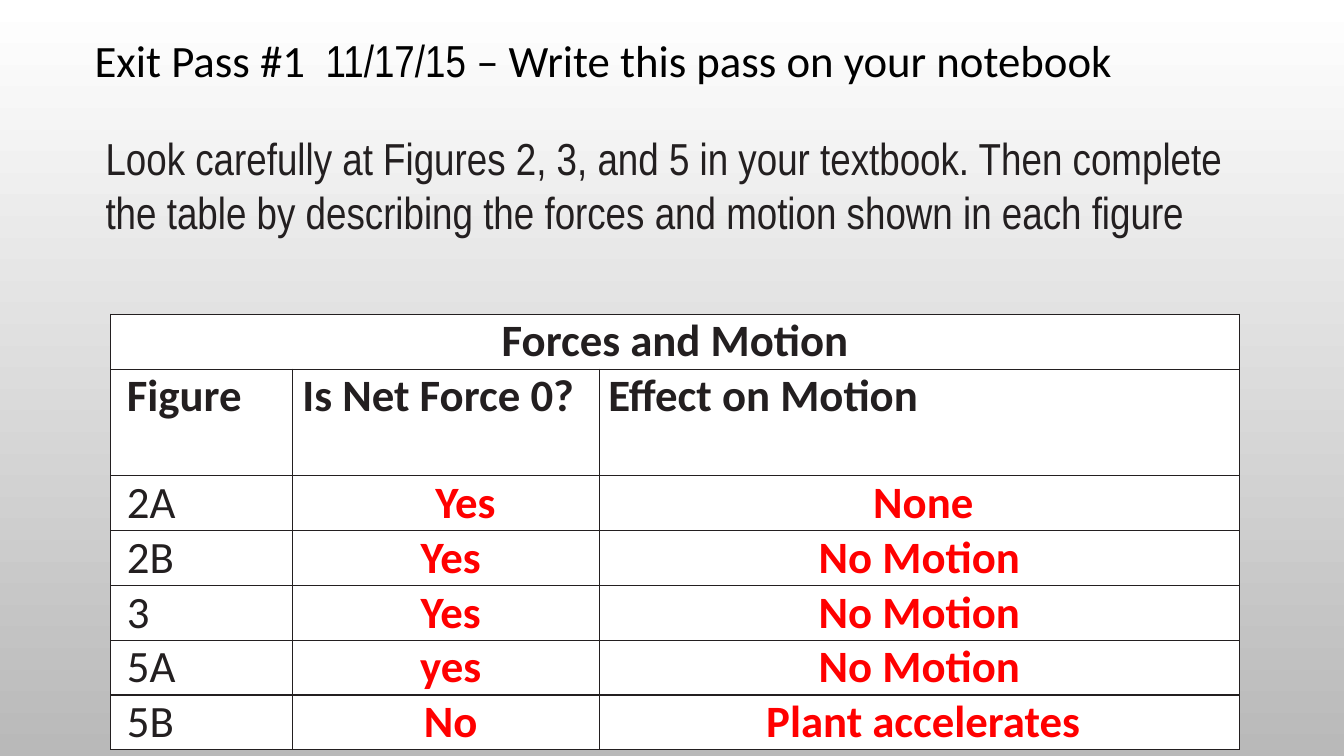
"""Build the exit pass slide with its forces and motion table."""
from dataclasses import dataclass

from lxml import etree
from pptx import Presentation
from pptx import util as u
from pptx.dml.color import RGBColor
from pptx.enum import text
from pptx.oxml import ns

CM = u.Cm


@dataclass(frozen=True)
class Theme:
    """Colours, fonts and type size of the slide."""
    ink: str = "231F20"
    title: str = "000000"
    answer: str = "FF0000"
    cell: str = "FFFFFF"
    sky: tuple = ("FFFFFF", "B9B9B9")
    body: str = "Calibri"
    narrow: str = "Arial Narrow"
    size: int = 32
    border: int = 1


THEME = Theme()
TITLE = [
    ("Exit Pass #1  ", THEME.body),
    ("11/17/15", THEME.narrow),
    (" – Write this pass on your notebook", THEME.body),
]
TASK = ("Look carefully at Figures 2, 3, and 5 in your textbook. Then complete "
        "the table by describing the forces and motion shown in each figure")
CAPTION = "Forces and Motion"
HEADERS = ["Figure", "Is Net Force 0?", "Effect on Motion"]
ANSWERS = [
    ("2A", "Yes", "None"),
    ("2B", "Yes", "No Motion"),
    ("3", "Yes", "No Motion"),
    ("5A", "yes", "No Motion"),
    ("5B", "No", "Plant accelerates"),
]
TITLE_AREA = (2.13, 0.69, 27.05, 1.63)
TASK_AREA = (2.41, 3.18, 29.08, 3)
TABLE_CORNER = (2.79, 7.92)
COLUMNS = [4.58, 7.73, 16.14]
ROW, HEADER_ROW = 1.35, 2.69
HEADER_INDENTS = [0.41, 0.25, 0.23]
ANSWER_INDENTS = {"2A": (0.41, 0.99, 0.2), "5B": (0.41, 0.25, 0.2)}
USUAL_INDENTS = (0.41, 0.25, 0)


def style(font, color, name=THEME.body, bold=False):
    """Apply the shared type size with a face, colour and weight."""
    font.name, font.size, font.bold = name, u.Pt(THEME.size), bold
    font.color.rgb = RGBColor.from_string(color)


def paint_background(page):
    """Fill the page from white at the top to grey at the bottom."""
    fill = page.background.fill
    fill.gradient()
    fill.gradient_angle = 270
    for stop, color in zip(fill.gradient_stops, THEME.sky):
        stop.color.rgb = RGBColor.from_string(color)


def add_borders(cell):
    """Draw a thin line on every side of a cell."""
    properties = cell._tc.get_or_add_tcPr()
    for side in ("lnL", "lnR", "lnT", "lnB"):
        line = etree.SubElement(properties, ns.qn(f"a:{side}"), w=str(u.Pt(THEME.border)))
        solid = etree.SubElement(line, ns.qn("a:solidFill"))
        etree.SubElement(solid, ns.qn("a:srgbClr"), val=THEME.ink)


def write_cell(cell, words, indent=0, centred=False, color=THEME.ink, bold=True):
    """Write and style the words of one cell."""
    cell.margin_left = CM(indent)
    cell.margin_right = cell.margin_top = cell.margin_bottom = 0
    cell.text = words
    para = cell.text_frame.paragraphs[0]
    para.alignment = text.PP_ALIGN.CENTER if centred else text.PP_ALIGN.LEFT
    style(para.font, color, bold=bold)


def add_title(page):
    """Place the title and set its two faces."""
    title = page.shapes.title
    title.left, title.top, title.width, title.height = map(CM, TITLE_AREA)
    frame = title.text_frame
    frame.word_wrap = True
    frame.auto_size = text.MSO_AUTO_SIZE.NONE
    frame.vertical_anchor = text.MSO_ANCHOR.TOP
    para = frame.paragraphs[0]
    para.alignment = text.PP_ALIGN.LEFT
    for words, face in TITLE:
        span = para.add_run()
        span.text = words
        style(span.font, THEME.title, face)


def add_task(page):
    """Place the instruction under the title."""
    frame = page.shapes.add_textbox(*map(CM, TASK_AREA)).text_frame
    frame.word_wrap = True
    frame.text = TASK
    style(frame.paragraphs[0].font, THEME.ink, THEME.narrow)


def add_answers(page):
    """Place the table with its caption, headers and answers."""
    heights = [ROW, HEADER_ROW] + [ROW] * len(ANSWERS)
    area = (*TABLE_CORNER, sum(COLUMNS), sum(heights))
    table = page.shapes.add_table(len(heights), len(COLUMNS), *map(CM, area)).table
    table.first_row = table.horz_banding = False
    for column, width in zip(table.columns, COLUMNS):
        column.width = CM(width)
    for row, height in zip(table.rows, heights):
        row.height = CM(height)
    for cell in table.iter_cells():
        add_borders(cell)
        cell.fill.solid()
        cell.fill.fore_color.rgb = RGBColor.from_string(THEME.cell)

    table.cell(0, 0).merge(table.cell(0, len(COLUMNS) - 1))
    write_cell(table.cell(0, 0), CAPTION, centred=True)
    for place, (words, indent) in enumerate(zip(HEADERS, HEADER_INDENTS)):
        write_cell(table.cell(1, place), words, indent)
    for line, answer in enumerate(ANSWERS, start=2):
        indents = ANSWER_INDENTS.get(answer[0], USUAL_INDENTS)
        for place, (words, indent) in enumerate(zip(answer, indents)):
            given = place > 0
            color = THEME.answer if given else THEME.ink
            write_cell(table.cell(line, place), words, indent, given, color, given)


def main():
    """Build and save the deck."""
    deck = Presentation()
    deck.slide_width, deck.slide_height = CM(33.87), CM(19.05)
    page = deck.slides.add_slide(deck.slide_layouts.get_by_name("Title Only"))
    paint_background(page)
    add_answers(page)
    add_task(page)
    add_title(page)
    deck.save("out.pptx")


if __name__ == "__main__":
    main()
